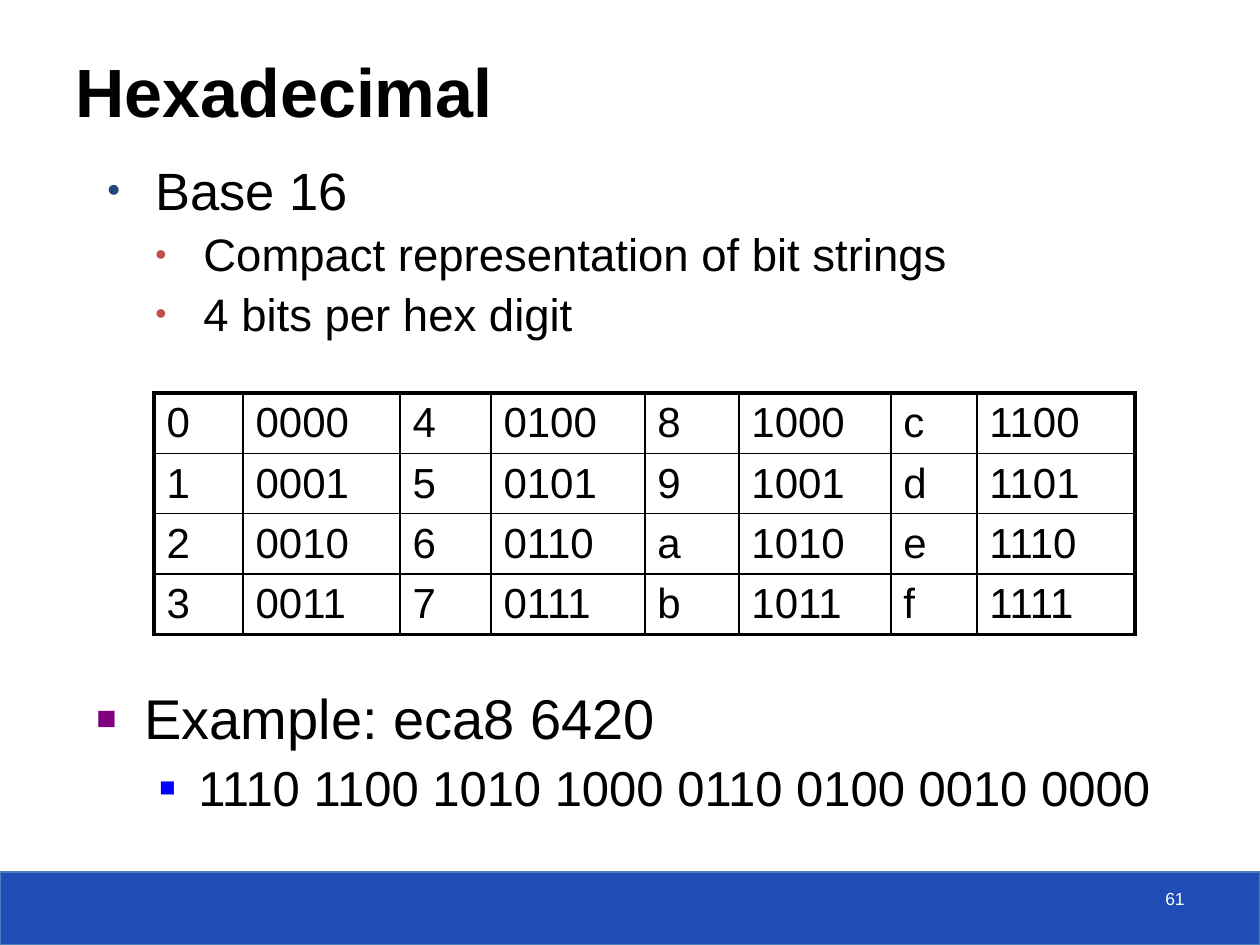
from lxml import etree
from pptx import Presentation
from pptx.dml.color import RGBColor
from pptx.enum.shapes import MSO_SHAPE
from pptx.enum.text import MSO_ANCHOR, PP_ALIGN
from pptx.oxml.ns import qn
from pptx.util import Emu, Pt

RECTANGLE = MSO_SHAPE.RECTANGLE
BOTTOM, MIDDLE, TOP = MSO_ANCHOR.BOTTOM, MSO_ANCHOR.MIDDLE, MSO_ANCHOR.TOP
LEFT, RIGHT = PP_ALIGN.LEFT, PP_ALIGN.RIGHT

PIXELS_PER_INCH = 126
FONT = "Arial"
BLACK = RGBColor(0x00, 0x00, 0x00)
WHITE = RGBColor(0xFF, 0xFF, 0xFF)
FOOTER_BLUE = RGBColor(0x20, 0x4D, 0xB5)
FOOTER_LINE = RGBColor(0x4B, 0x7E, 0xBC)
NAVY = RGBColor(0x1F, 0x49, 0x7D)
RED = RGBColor(0xC0, 0x50, 0x4D)
PURPLE = RGBColor(0x80, 0x00, 0x80)
BRIGHT_BLUE = RGBColor(0x00, 0x00, 0xFF)

COLUMN_WIDTHS = (89, 157, 91, 154, 94, 152, 86, 158)
ROW_HEIGHTS = (60, 59, 60, 59)
OUTER, PAIR, INNER = 2.25, 1.5, 1


def px(length):
    return Emu(round(length * 914400 / PIXELS_PER_INCH))


def box(*bounds):
    return [px(length) for length in bounds]


def style_font(paragraph, size, color=BLACK, bold=False):
    font = paragraph.font
    font.name, font.size, font.bold = FONT, Pt(size), bold
    font.color.rgb = color


def add_text_box(slide, bounds, anchor=TOP):
    shape = slide.shapes.add_textbox(*box(*bounds))
    shape.text_frame.word_wrap = True
    shape.text_frame.vertical_anchor = anchor
    return shape


def add_line(slide, bounds, text, size, color, bold=False, align=LEFT, anchor=TOP):
    shape = add_text_box(slide, bounds, anchor)
    paragraph = shape.text_frame.paragraphs[0]
    paragraph.text = text
    paragraph.alignment = align
    style_font(paragraph, size, color, bold)
    return shape


def add_footer(slide):
    footer = slide.shapes.add_shape(RECTANGLE, *box(0, 872, 1260, 73))
    footer.shadow.inherit = False
    footer.fill.solid()
    footer.fill.fore_color.rgb = FOOTER_BLUE
    footer.line.color.rgb = FOOTER_LINE
    footer.line.width = Pt(0.75)


def add_title(slide, text):
    title = add_line(slide, (63, 32, 1171, 105), text, 39, BLACK, True, anchor=BOTTOM)
    title.fill.solid()
    title.fill.fore_color.rgb = WHITE
    color = title.fill._xPr.find(qn("a:solidFill"))[0]
    etree.SubElement(color, qn("a:alpha"), val="70000")


def set_bullet(paragraph, character, color, percent, margin, hanging):
    properties = paragraph._p.get_or_add_pPr()
    properties.set("marL", str(px(margin)))
    properties.set("indent", str(-px(hanging)))
    bullet_color = etree.SubElement(properties, qn("a:buClr"))
    etree.SubElement(bullet_color, qn("a:srgbClr"), val=str(color))
    etree.SubElement(properties, qn("a:buSzPct"), val=str(percent * 1000))
    etree.SubElement(properties, qn("a:buFont"), typeface=FONT)
    etree.SubElement(properties, qn("a:buChar"), char=character)


def add_bullets(slide, bounds, space_before, items):
    """Each item is text, size, level and the bullet settings."""
    frame = add_text_box(slide, bounds).text_frame
    for index, (text, size, level, bullet) in enumerate(items):
        paragraph = frame.add_paragraph() if index else frame.paragraphs[0]
        paragraph.text = text
        paragraph.level = level
        set_bullet(paragraph, *bullet)
        paragraph.line_spacing = 0.9
        paragraph.space_before = Pt(space_before if index else 0)
        style_font(paragraph, size)


def set_borders(cell, widths):
    properties = cell._tc.get_or_add_tcPr()
    for tag, width in zip(("a:lnL", "a:lnR", "a:lnT", "a:lnB"), widths):
        line = etree.SubElement(properties, qn(tag), w=str(Pt(width)))
        fill = etree.SubElement(line, qn("a:solidFill"))
        etree.SubElement(fill, qn("a:srgbClr"), val=str(BLACK))


def column_border(edge):
    if edge in (0, len(COLUMN_WIDTHS)):
        return OUTER
    return INNER if edge % 2 else PAIR


def row_border(edge):
    return OUTER if edge in (0, len(ROW_HEIGHTS)) else INNER


def fill_cell(cell, row, column):
    digit = row + len(ROW_HEIGHTS) * (column // 2)
    set_borders(cell, (column_border(column), column_border(column + 1),
                       row_border(row), row_border(row + 1)))
    cell.fill.background()
    cell.margin_top = cell.margin_bottom = px(5)
    cell.vertical_anchor = MIDDLE
    cell.text = f"{digit:04b}" if column % 2 else f"{digit:x}"
    style_font(cell.text_frame.paragraphs[0], 24)


def add_hex_table(slide):
    bounds = box(154, 393, sum(COLUMN_WIDTHS), sum(ROW_HEIGHTS))
    table = slide.shapes.add_table(len(ROW_HEIGHTS), len(COLUMN_WIDTHS), *bounds).table
    table.first_row = table.horz_banding = False
    for column, width in enumerate(COLUMN_WIDTHS):
        table.columns[column].width = px(width)
    for row, height in enumerate(ROW_HEIGHTS):
        table.rows[row].height = px(height)
        for column in range(len(COLUMN_WIDTHS)):
            fill_cell(table.cell(row, column), row, column)


def main():
    presentation = Presentation()
    presentation.slide_width, presentation.slide_height = box(1260, 945)
    slide = presentation.slides.add_slide(presentation.slide_layouts[6])

    add_footer(slide)
    add_title(slide, "Hexadecimal")
    detail = ("•", RED, 70, 96, 48)
    add_bullets(slide, (95, 159, 1140, 214), 6, [
        ("Base 16", 30, 0, ("•", NAVY, 70, 48, 48)),
        ("Compact representation of bit strings", 26, 1, detail),
        ("4 bits per hex digit", 26, 1, detail),
    ])
    add_hex_table(slide)
    add_bullets(slide, (84, 685, 1140, 154), 7, [
        ("Example: eca8 6420", 32, 0, ("■", PURPLE, 60, 48, 48)),
        ("1110 1100 1010 1000 0110 0100 0010 0000", 28, 1,
         ("■", BRIGHT_BLUE, 55, 102, 39)),
    ])
    add_line(slide, (903, 882, 294, 42), "61", 10, WHITE, align=RIGHT)
    presentation.save("out.pptx")


if __name__ == "__main__":
    main()
